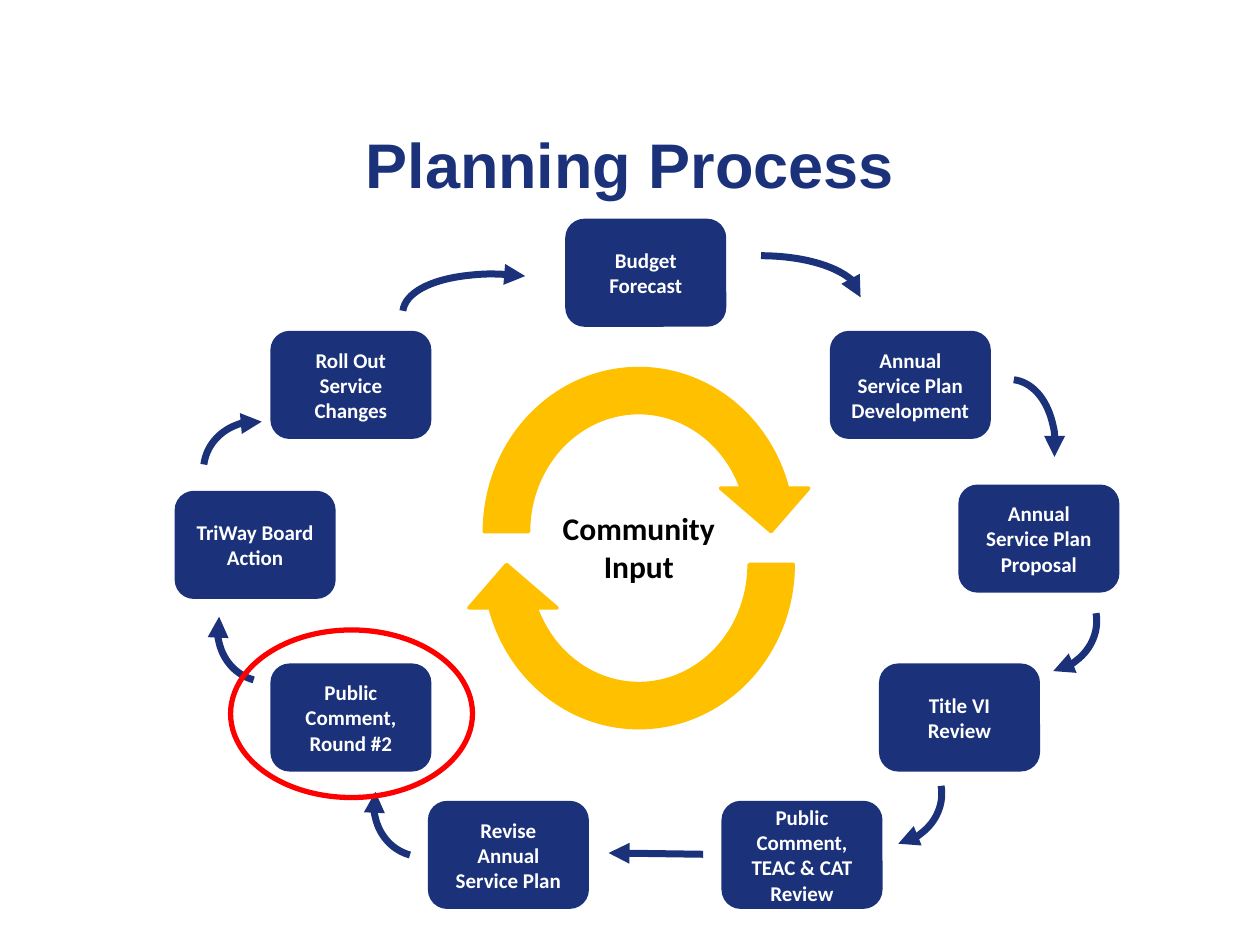
from lxml.etree import SubElement
from pptx import Presentation
from pptx.dml.color import RGBColor
from pptx.enum.shapes import MSO_CONNECTOR, MSO_SHAPE
from pptx.enum.text import MSO_ANCHOR, MSO_AUTO_SIZE, PP_ALIGN
from pptx.oxml.ns import qn
from pptx.util import Inches, Pt

NAVY = RGBColor(0x1B, 0x32, 0x7A)
GOLD = RGBColor(0xFF, 0xC0, 0x00)
RED = RGBColor(0xFF, 0x00, 0x00)
WHITE = RGBColor(0xFF, 0xFF, 0xFF)
BLACK = RGBColor(0x00, 0x00, 0x00)

BOX_W, BOX_H = 1.25, 0.83

STEPS = [  # text, left, top; clockwise from the top
    ("Budget\nForecast", 4.5, 1.75),
    ("Annual Service Plan Development", 6.6, 2.64),
    ("Annual Service Plan Proposal", 7.62, 3.86),
    ("Title VI Review", 6.99, 5.28),
    ("Public Comment, TEAC & CAT Review", 5.74, 6.37),
    ("Revise Annual Service Plan", 3.41, 6.37),
    ("Public Comment, Round #2", 2.16, 5.28),
    ("TriWay Board Action", 1.4, 3.91),
    ("Roll Out Service Changes", 2.16, 2.64),
]

SHORT = (162, 214.54)  # start and end angle of the shorter arcs
ARCS = [  # left, top, width, height, rotation, angles
    (5.25, 2.03, 1.58, 0.66, 0, None),
    (7.58, 3.01, 0.79, 1.17, 7, SHORT),
    (7.88, 4.51, 0.79, 0.86, 80.2, SHORT),
    (6.65, 5.88, 0.79, 0.86, 80.2, SHORT),
    (2.97, 5.94, 0.79, 0.86, 195, SHORT),
    (1.73, 4.55, 0.79, 0.86, 195, SHORT),
    (1.65, 3.31, 0.79, 0.86, 277.2, SHORT),
    (3.74, 1.64, 0.79, 1.89, 277.2, SHORT),
]


def write(frame, text, **font):
    """Fill a frame with centred bold text, one paragraph a line."""
    frame.text = text
    color = font.pop("color")
    for para in frame.paragraphs:
        para.alignment = PP_ALIGN.CENTER
        para.font.color.rgb = color
        for name, value in {"bold": True, **font}.items():
            setattr(para.font, name, value)


def add_form(shapes, kind, area, line, width, fill=None):
    """Add a preset shape without shadow; no fill leaves it open."""
    form = shapes.add_shape(kind, *map(Inches, area))
    form.shadow.inherit = False
    if fill is None:
        form.fill.background()
    else:
        form.fill.solid()
        form.fill.fore_color.rgb = fill
    form.line.color.rgb = line
    form.line.width = Pt(width)
    return form


def add_head(form):
    SubElement(form.line._get_or_add_ln(), qn("a:tailEnd"), type="triangle")


def add_title(slide):
    title = slide.shapes.title
    place = {"left": 0.75, "top": 0.92, "width": 8.5, "height": 0.75}
    for name, value in place.items():
        setattr(title, name, Inches(value))
    title.text_frame.vertical_anchor = MSO_ANCHOR.MIDDLE
    write(title.text_frame, "Planning Process",
          name="Arial", size=Pt(36), color=NAVY)


def add_cycle(shapes):
    group = shapes.add_group_shape()
    for top, turn in ((2.75, 0), (3.01, 180)):
        arrow = add_form(group.shapes, MSO_SHAPE.CIRCULAR_ARROW,
                         (3.67, top, 2.8, 2.94), GOLD, 2, GOLD)
        arrow.rotation = turn


def add_label(shapes):
    label = shapes.add_textbox(*map(Inches, (4.36, 3.99, 1.42, 0.71)))
    frame = label.text_frame
    frame.word_wrap = False
    frame.auto_size = MSO_AUTO_SIZE.SHAPE_TO_FIT_TEXT
    write(frame, "Community\nInput",
          name="Calibri", size=Pt(18), color=BLACK)


def add_step(shapes, text, left, top):
    step = add_form(shapes, MSO_SHAPE.ROUNDED_RECTANGLE,
                    (left, top, BOX_W, BOX_H), NAVY, 2, NAVY)
    step.text_frame.word_wrap = True
    step.text_frame.vertical_anchor = MSO_ANCHOR.MIDDLE
    write(step.text_frame, text, name="Calibri", size=Pt(12), color=WHITE)


def add_arc(shapes, left, top, width, height, turn, angles):
    arc = add_form(shapes, MSO_SHAPE.ARC, (left, top, width, height), NAVY, 4)
    arc.rotation = turn
    if angles:
        arc.adjustments[0], arc.adjustments[1] = angles
    add_head(arc)


def add_arrow(shapes, *ends):
    arrow = shapes.add_connector(MSO_CONNECTOR.STRAIGHT, *map(Inches, ends))
    arrow.line.color.rgb = NAVY
    arrow.line.width = Pt(4)
    add_head(arrow)
    SubElement(arrow._element.spPr, qn("a:effectLst"))


def main():
    deck = Presentation()
    deck.slide_width, deck.slide_height = Inches(10), Inches(7.5)
    slide = deck.slides.add_slide(deck.slide_layouts[5])
    shapes = slide.shapes
    add_title(slide)
    add_cycle(shapes)
    add_label(shapes)
    for step in STEPS:
        add_step(shapes, *step)
    for arc in ARCS:
        add_arc(shapes, *arc)
    add_arrow(shapes, 5.58, 6.78, 4.83, 6.77)
    add_form(shapes, MSO_SHAPE.OVAL, (1.83, 5, 1.92, 1.33), RED, 3)
    deck.save("out.pptx")


if __name__ == "__main__":
    main()
